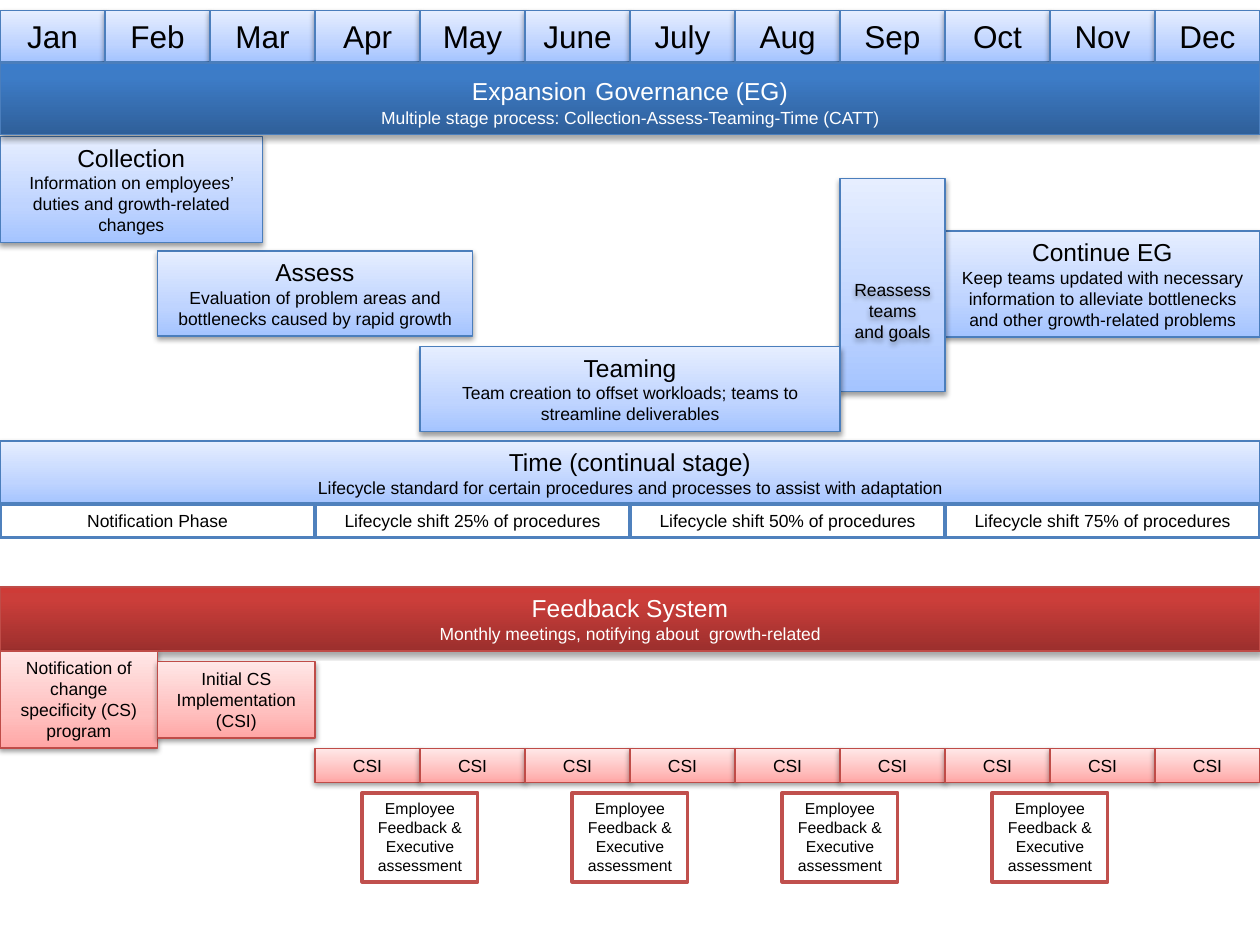
from dataclasses import dataclass
from lxml import etree
from pptx import Presentation
from pptx.dml.color import RGBColor as Rgb
from pptx.enum.shapes import MSO_SHAPE as Form
from pptx.enum.text import MSO_AUTO_SIZE as Fit, MSO_ANCHOR as Anchor, PP_ALIGN as Align
from pptx.oxml import parse_xml
from pptx.util import Inches, Pt

NS = "http://schemas.openxmlformats.org/drawingml/2006/main"
WIDE, TALL = 10, 7.5
COLS, ROWS = 12, 90


@dataclass(frozen=True)
class Style:
    line: str
    stops: tuple = ()
    ink: str = "000000"
    width: float = 0.75
    shade: int = 38
    drop: float = 1.6


@dataclass(frozen=True)
class Theme:
    font: str = "Arial"
    month: int = 18
    title: int = 14
    body: int = 10
    note: int = 9
    sky: Style = Style("4B7EBC", ((0, "A4C4FF"), (35, "BFD4FF"), (100, "E6EEFF")))
    navy: Style = Style("4B7EBC", ((0, "2F5F99"), (80, "3D7CC7"), (100, "3A7CCB")),
                        "FFFFFF", shade=35, drop=1.8)
    rose: Style = Style("BF4C48", ((0, "FFA6A5"), (35, "FFC0BF"), (100, "FFE7E7")))
    red: Style = Style("BF4C48", ((0, "9C2F2D"), (80, "CB3E3A"), (100, "CE3B37")),
                       "FFFFFF", shade=35, drop=1.8)
    phase: Style = Style("4F81BD", width=2)
    review: Style = Style("C0504D", width=2)


@dataclass(frozen=True)
class Box:
    col: float
    row: float
    cols: float
    rows: float

    def inner(self, col, row, cols, rows):
        return Box(self.col + col, self.row + row, cols, rows)

    def place(self):
        wide, tall = WIDE / COLS, TALL / ROWS
        return [Inches(n) for n in (self.col * wide, self.row * tall,
                                    self.cols * wide, self.rows * tall)]


THEME = Theme()


def shadow(shape, style):
    shape.shadow.inherit = False
    effects = shape.element.spPr.find(f"{{{NS}}}effectLst")
    outer = etree.SubElement(effects, f"{{{NS}}}outerShdw", blurRad=str(Pt(3.1)),
                             dist=str(Pt(style.drop)), dir="5400000", rotWithShape="0")
    color = etree.SubElement(outer, f"{{{NS}}}srgbClr", val="000000")
    etree.SubElement(color, f"{{{NS}}}alpha", val=str(style.shade * 1000))


def blend(shape, stops):
    shape.fill.gradient()
    old = shape.element.spPr.find(f"{{{NS}}}gradFill")
    marks = "".join(f'<a:gs pos="{at * 1000}"><a:srgbClr val="{color}"/></a:gs>'
                    for at, color in stops)
    new = parse_xml(f'<a:gradFill xmlns:a="{NS}" rotWithShape="1"><a:gsLst>{marks}</a:gsLst>'
                    '<a:lin ang="16200000" scaled="0"/></a:gradFill>')
    old.getparent().replace(old, new)


def ink(run, size, color):
    run.font.name = THEME.font
    run.font.size = Pt(size)
    run.font.color.rgb = Rgb.from_string(color)


def write(shape, text, sizes, color):
    frame = shape.text_frame
    frame.text = text
    frame.word_wrap = True
    frame.auto_size = Fit.SHAPE_TO_FIT_TEXT
    frame.vertical_anchor = Anchor.TOP
    for para, size in zip(frame.paragraphs, sizes):
        para.alignment = Align.CENTER
        for run in para.runs:
            ink(run, size, color)


def panel(slide, box, style, text="", sizes=(THEME.title, THEME.body)):
    shape = slide.shapes.add_shape(Form.RECTANGLE, *box.place())
    shape.line.color.rgb = Rgb.from_string(style.line)
    shape.line.width = Pt(style.width)
    if style.stops:
        blend(shape, style.stops)
        shadow(shape, style)
    else:
        shape.fill.solid()
        shape.fill.fore_color.rgb = Rgb.from_string("FFFFFF")
        shape.shadow.inherit = False
    if text:
        write(shape, text, sizes, style.ink)
    return shape


def strip(slide, box, style, names, size):
    step = box.cols / len(names)
    for i, name in enumerate(names):
        panel(slide, box.inner(i * step, 0, step, box.rows), style, name, [size])


def stages(slide, box):
    sky = THEME.sky
    panel(slide, box.inner(9, 9, 3, 10.1), sky,
          "Continue EG\nKeep teams updated with necessary information to alleviate "
          "bottlenecks and other growth-related problems")
    panel(slide, box.inner(1.5, 10.9, 3, 8.1), sky,
          "Assess\nEvaluation of problem areas and bottlenecks caused by rapid growth")
    panel(slide, box.inner(0, 0, 2.5, 10.1), sky,
          "Collection\nInformation on employees’ duties and growth-related changes")
    panel(slide, box.inner(8, 4, 1, 20.3), sky)
    panel(slide, box.inner(4, 20, 4, 8.1), sky,
          "Teaming\nTeam creation to offset workloads; teams to streamline deliverables")
    label = slide.shapes.add_textbox(*box.inner(8, 13, 1, 7.3).place())
    write(label, "Reassess teams and goals", [THEME.body], sky.ink)
    shadow(label, sky)


def header(slide, box):
    shape = panel(slide, box, THEME.navy,
                  "Expansion\nMultiple stage process: Collection-Assess-Teaming-Time (CATT)")
    first = shape.text_frame.paragraphs[0]
    for text, size in ((" ", THEME.month), ("Governance (EG)", THEME.title)):
        run = first.add_run()
        run.text = text
        ink(run, size, THEME.navy.ink)


def cycle(slide, box):
    panel(slide, box.inner(0, 0, box.cols, 6), THEME.sky,
          "Time (continual stage)\nLifecycle standard for certain procedures and "
          "processes to assist with adaptation")
    shifts = [f"Lifecycle shift {n}% of procedures" for n in (25, 50, 75)]
    strip(slide, box.inner(0, 6, box.cols, 3.2), THEME.phase,
          ["Notification Phase"] + shifts, THEME.body)


def feedback(slide, box):
    body = (THEME.body, THEME.body)
    panel(slide, box.inner(0, 0, box.cols, 6.1), THEME.red,
          "Feedback System\nMonthly meetings, notifying about  growth-related")
    panel(slide, box.inner(0, 6.1, 1.5, 9.25), THEME.rose,
          "Notification of change specificity (CS) program", body)
    panel(slide, box.inner(1.5, 7.1, 1.5, 7.3), THEME.rose,
          "Initial CS Implementation\n(CSI)", body)
    strip(slide, box.inner(3, 15.4, 9, 3.2), THEME.rose, ["CSI"] * 9, THEME.body)
    for col in range(4, 11, 2):
        panel(slide, box.inner(col - 0.55, 19.6, 1.1, 8.5), THEME.review,
              "Employee\nFeedback & Executive assessment", (THEME.note, THEME.note))


def main():
    deck = Presentation()
    deck.slide_width, deck.slide_height = Inches(WIDE), Inches(TALL)
    slide = deck.slides.add_slide(deck.slide_layouts[6])
    months = "Jan Feb Mar Apr May June July Aug Sep Oct Nov Dec".split()
    stages(slide, Box(0, 13, COLS, 28))
    strip(slide, Box(0, 1, COLS, 4.85), THEME.sky, months, THEME.month)
    header(slide, Box(0, 6, COLS, 6.85))
    cycle(slide, Box(0, 42, COLS, 9.2))
    feedback(slide, Box(0, 55.9, COLS, 28.1))
    deck.save("out.pptx")


if __name__ == "__main__":
    main()
